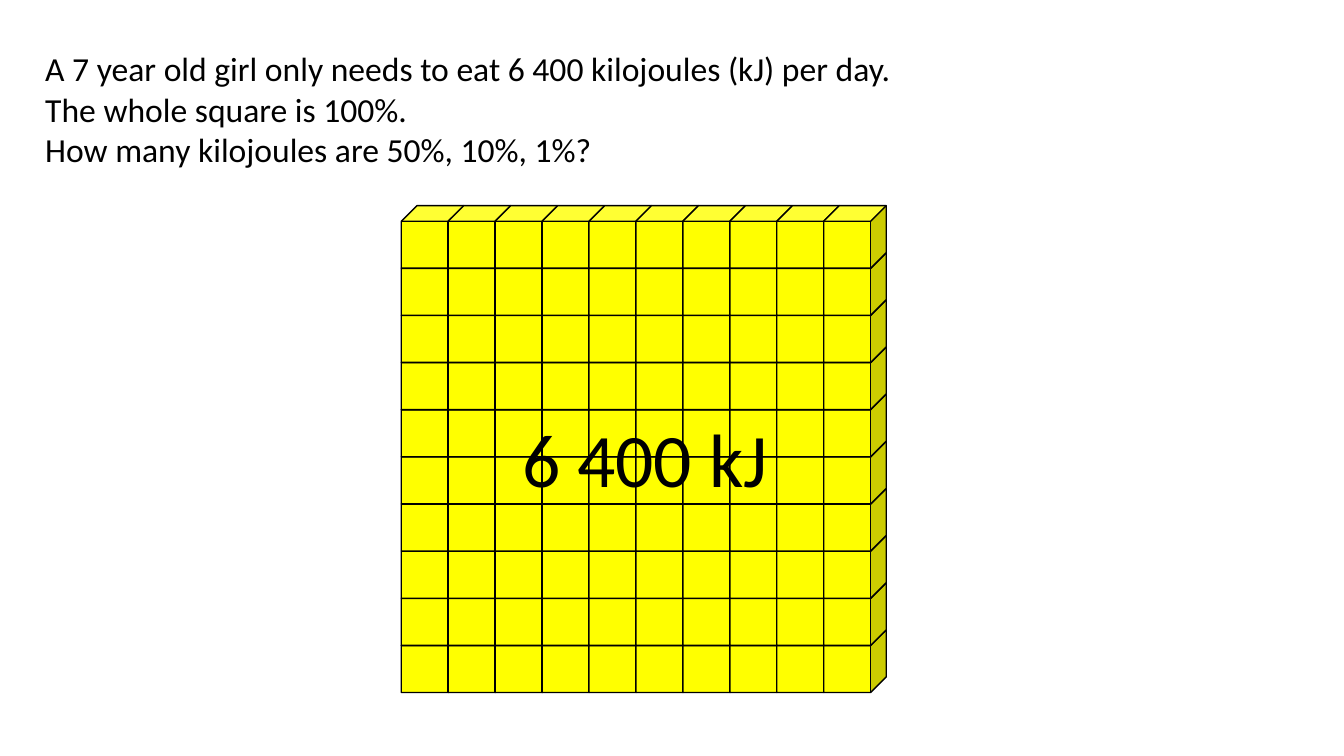
from itertools import product

from pptx import Presentation
from pptx.dml.color import RGBColor
from pptx.enum.shapes import MSO_SHAPE as Shape
from pptx.enum.text import MSO_AUTO_SIZE as AutoSize
from pptx.util import Inches, Pt

QUESTION = [
    "A 7 year old girl only needs to eat 6 400 kilojoules (kJ) per day.",
    "The whole square is 100%.",
    "How many kilojoules are 50%, 10%, 1%?",
]
TOTAL = "6 400 kJ"
CUBES_PER_SIDE = 10
CUBE_SIZE = 0.62


def color(hex_code):
    return RGBColor.from_string(hex_code)


def add_text(shapes, box, lines, size):
    frame = shapes.add_textbox(*map(Inches, box)).text_frame
    frame.word_wrap = True
    frame.auto_size = AutoSize.SHAPE_TO_FIT_TEXT
    frame.text = "\n".join(lines)
    for paragraph in frame.paragraphs:
        for run in paragraph.runs:
            run.font.name = "Calibri"
            run.font.size = Pt(size)
            run.font.color.rgb = color("000000")


def add_cube(shapes, left, top):
    cube = shapes.add_shape(Shape.CUBE, *map(Inches, (left, top, CUBE_SIZE, CUBE_SIZE)))
    cube.adjustments[0] = 0.25
    cube.shadow.inherit = False
    cube.fill.solid()
    cube.fill.fore_color.rgb = color("FFFF00")
    cube.line.color.rgb = color("000000")
    cube.line.width = Pt(1)


def add_hundred_square(slide, left, top, width, height):
    square = slide.shapes.add_group_shape().shapes
    column_step = (width - CUBE_SIZE) / (CUBES_PER_SIDE - 1)
    row_step = (height - CUBE_SIZE) / (CUBES_PER_SIDE - 1)
    for row, column in product(reversed(range(CUBES_PER_SIDE)), range(CUBES_PER_SIDE)):
        add_cube(square, left + column * column_step, top + row * row_step)
    label_box = (left + 1.1, top + 2, 2.94, 1.01)
    add_text(square, label_box, [TOTAL], 54)


def main():
    deck = Presentation()
    deck.slide_width = Inches(13.33)
    deck.slide_height = Inches(7.5)
    slide = deck.slides.add_slide(deck.slide_layouts[6])
    add_text(slide.shapes, (0.35, 0.43, 12.06, 1.31), QUESTION, 24)
    add_hundred_square(slide, 3.98, 2.04, 4.81, 4.83)
    deck.save("out.pptx")


if __name__ == "__main__":
    main()
